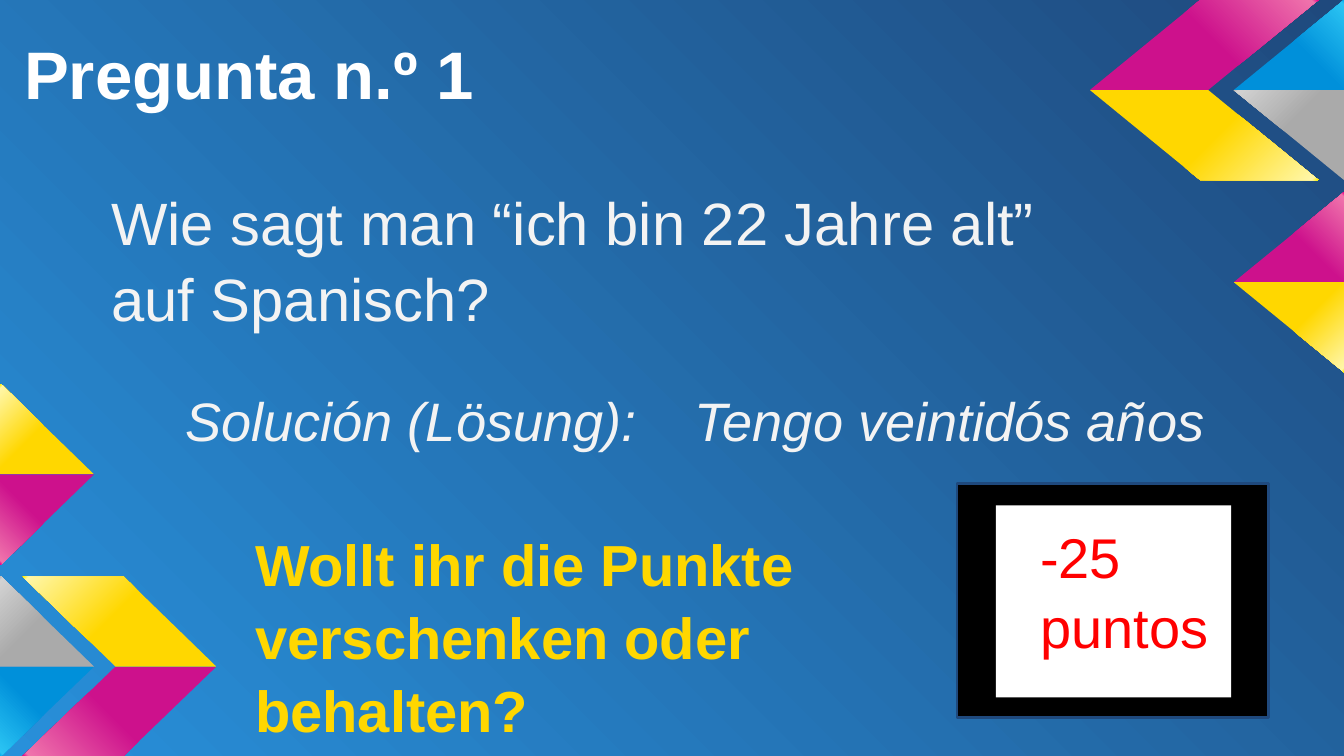
import pptx
import pptx.dml.color
import pptx.enum.shapes
import pptx.enum.text
import pptx.oxml
import pptx.util
from pptx.util import Inches

W, H = 10, 5.625
FONT = "Arial"
NS = 'xmlns:a="http://schemas.openxmlformats.org/drawingml/2006/main"'

# Gradient base, highlight and end colours
COLORS = {
    "blue": ("0090DA", "2BC4F3", "00AEEE"),
    "grey": ("AAAAAA", "D2D2D2", "B9B9B9"),
    "yellow": ("FFD700", "FFF7A9", "FFF100"),
    "magenta": ("CD118C", "F074AC", "EB008B"),
}

# Chevrons: tip x, tip y, run, width at tip, width at far end, upper, lower
HALF = 0.67
CHEVRONS = [
    (0.7, 4.96, -0.69, -0.7, -0.01, "grey", "blue"),
    (9.18, 0.67, 0.82, 0.82, 0, "blue", "grey"),
    (0.7, 3.53, -0.69, -0.7, -0.01, "yellow", "magenta"),
    (1.61, 4.96, -0.69, -0.75, -0.75, "yellow", "magenta"),
    (8.11, 0.67, 0.82, 0.88, 0.88, "magenta", "yellow"),
    (9.18, 2.1, 0.82, 0.82, 0, "magenta", "yellow"),
]

# Text boxes: left, top, width, height, text, format
TITLE = (0.08, 0, 7.52, 0.94, "Pregunta n.º 1")
TEXTS = [
    (0.73, 1.26, 7.61, 1.86, "Wie sagt man “ich bin 22 Jahre alt” auf Spanisch?",
     dict(size=32, color="F3F3F3")),
    (1.8, 3.81, 5.46, 1.32, "Wollt ihr die Punkte verschenken oder behalten?",
     dict(size=31, color="FFD700", bold=True)),
    (1.28, 2.76, 4.09, 1.86, "Solución (Lösung):",
     dict(size=29, color="F3F3F3", italic=True)),
    (5.07, 2.76, 4.09, 1.86, "Tengo veintidós años",
     dict(size=29, color="F3F3F3", italic=True)),
]
FRAME = (7.12, 3.6, 2.32, 1.74)
CARD = (7.41, 3.76, 1.75, 1.43)
POINTS = "-25\npuntos"


def rgb(color):
    return pptx.dml.color.RGBColor.from_string(color)


def box(*lengths):
    return [Inches(v) for v in lengths]


def set_gradient(fill, parent, stops, direction):
    fill.gradient()
    old = parent.xpath(".//a:gradFill")[0]
    gs = "".join(f'<a:gs pos="{pos * 1000}"><a:srgbClr val="{c}"/></a:gs>'
                 for pos, c in stops)
    new = pptx.oxml.parse_xml(
        f'<a:gradFill {NS} rotWithShape="1"><a:gsLst>{gs}</a:gsLst>{direction}</a:gradFill>')
    old.getparent().replace(old, new)


def set_text(sp, text, size, color, bold=False, italic=False, left=0.1,
             anchor="TOP", spacing=1.05):
    tf = sp.text_frame
    tf.word_wrap = True
    tf.auto_size = pptx.enum.text.MSO_AUTO_SIZE.NONE
    tf.vertical_anchor = pptx.enum.text.MSO_ANCHOR[anchor]
    tf.margin_left = Inches(left)
    tf.margin_top = tf.margin_right = tf.margin_bottom = Inches(0.1)
    tf.text = text
    for p in tf.paragraphs:
        p.alignment = pptx.enum.text.PP_ALIGN.LEFT
        p.line_spacing = spacing
        for r in p.runs:
            f = r.font
            f.name, f.size = FONT, pptx.util.Pt(size)
            f.bold, f.italic = bold, italic
            f.color.rgb = rgb(color)


def add_half(s, chevron, side, color):
    """Draw one half of a chevron; side is -1 for upper, 1 for lower."""
    x, y, run, near, far = chevron
    end = min(y + side * HALF, H)
    pts = [(x, y), (x + near, y), (x + run + far, end), (x + run, end)]
    pts = [tuple(box(*pt)) for pt in pts]
    builder = s.shapes.build_freeform(*pts[0], scale=1.0)
    builder.add_line_segments(pts[1:], close=True)
    sp = builder.convert_to_shape()
    sp.shadow.inherit = False
    sp.line.fill.background()
    angle = (45 if run > 0 else 135) if side > 0 else (315 if run > 0 else 225)
    if color == "grey":
        angle = 225
    base, light, last = COLORS[color]
    set_gradient(sp.fill, sp.element.spPr,
                 [(0, base), (54, base), (98, light), (100, last)],
                 f'<a:lin ang="{angle * 60000}" scaled="0"/>')


def add_rect(s, place, fill):
    sp = s.shapes.add_shape(pptx.enum.shapes.MSO_SHAPE.RECTANGLE, *box(*place))
    sp.shadow.inherit = False
    sp.fill.solid()
    sp.fill.fore_color.rgb = rgb(fill)
    sp.line.fill.background()
    return sp


def main():
    prs = pptx.Presentation()
    prs.slide_width, prs.slide_height = box(W, H)
    s = prs.slides.add_slide(prs.slide_layouts[5])

    # Background glowing from the bottom left corner
    set_gradient(s.background.fill, s.element, [(0, "2890DA"), (100, "1F497D")],
                 '<a:path path="circle"><a:fillToRect t="100000" r="100000"/></a:path>')

    # Chevron decoration
    for *chevron, upper, lower in CHEVRONS:
        add_half(s, chevron, -1, upper)
        add_half(s, chevron, 1, lower)

    # Title
    title = s.shapes.title
    title.left, title.top, title.width, title.height = box(*TITLE[:4])
    set_text(title, TITLE[4], 36, "FFFFFF", bold=True, anchor="BOTTOM", spacing=1)

    # Score card
    frame = add_rect(s, FRAME, "000000")
    frame.line.color.rgb = rgb("1F497D")
    frame.line.width = pptx.util.Pt(1.5)
    set_text(add_rect(s, CARD, "FFFFFF"), POINTS, 30, "FF0000", left=0.33)

    # Question, solution and prompt
    for *place, text, fmt in TEXTS:
        set_text(s.shapes.add_textbox(*box(*place)), text, **fmt)

    prs.save("out.pptx")


if __name__ == "__main__":
    main()
